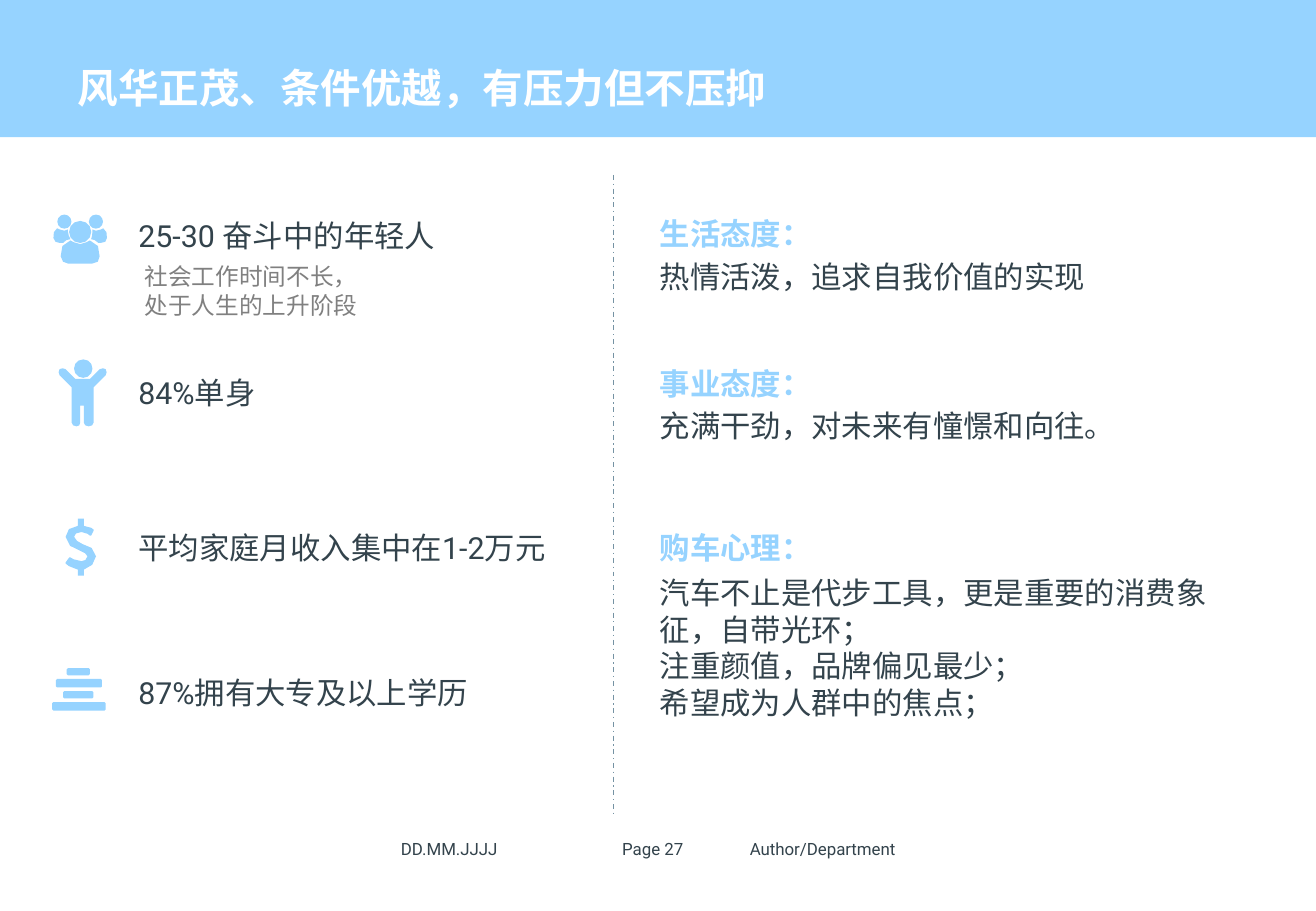
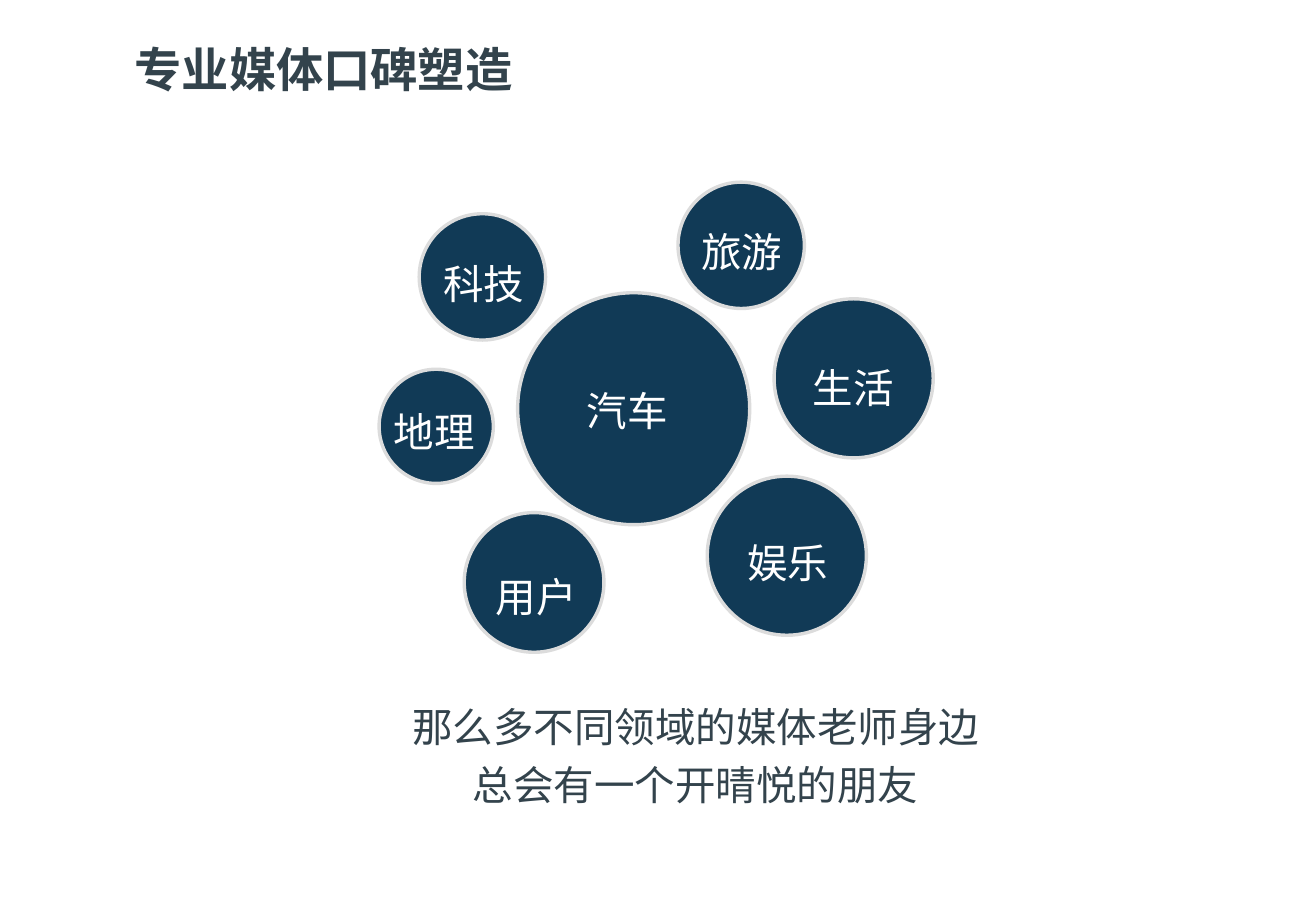
from dataclasses import dataclass
from math import cos, pi, sin

from lxml.etree import SubElement
from pptx import Presentation
from pptx.dml.color import RGBColor
from pptx.enum.dml import MSO_LINE as Dash
from pptx.enum.shapes import MSO_CONNECTOR as Link, MSO_SHAPE as Form
from pptx.enum.text import MSO_ANCHOR as Anchor, MSO_AUTO_SIZE as Fit, PP_ALIGN as Align
from pptx.oxml.ns import qn
from pptx.util import Pt

PX = 9144
SKY = RGBColor(0x96, 0xD3, 0xFF)
INK = RGBColor(0x33, 0x43, 0x4C)
GREY = RGBColor(0x80, 0x80, 0x80)
STEEL = RGBColor(0x75, 0x92, 0xA3)
NAVY = RGBColor(0x11, 0x3A, 0x56)
PALE = RGBColor(0xDC, 0xDC, 0xDC)
WHITE = RGBColor(0xFF, 0xFF, 0xFF)
LATIN = "Roboto"
HAN = "Noto Sans CJK SC"

Step = tuple[int, ...]
Loop = list[tuple[float, ...]]


@dataclass(frozen=True)
class Style:
    size: int
    color: RGBColor = INK
    bold: bool = False
    font: str = LATIN
    inset: bool = True
    wrap: bool = True
    grow: bool = True
    space: float | None = None
    align: Align = Align.LEFT
    anchor: Anchor = Anchor.TOP


@dataclass(frozen=True)
class Note:
    text: str
    box: tuple[int, int, int, int]
    style: Style


@dataclass(frozen=True)
class Topic:
    head: str
    body: str
    top: int
    below: int
    high: int


@dataclass(frozen=True)
class Disc:
    text: str
    left: int
    top: int
    size: int
    text_x: int
    text_y: int


FOOT = Style(10, inset=False, grow=False, anchor=Anchor.MIDDLE)
BODY = Style(18)
HEAD = Style(18, SKY, True)
SMALL = Style(14, GREY)
BAND = Style(24, WHITE, True, HAN)
TITLE = Style(28, INK, True, HAN, inset=False, grow=False, space=1.03)
LABEL = Style(24, WHITE, font=HAN, inset=False, wrap=False, space=1.2)
CLOSE = Style(24, font=HAN, inset=False, wrap=False, space=1.2, align=Align.CENTER)

NOTES = [
    Note("Author/Department", (617, 683, 148, 31), FOOT),
    Note("DD.MM.JJJJ", (330, 683, 176, 31), FOOT),
    Note("Page 27", (512, 683, 98, 31), FOOT),
    Note("风华正茂、条件优越，有压力但不压抑", (54, 47, 819, 52), BAND),
    Note("25-30 奋斗中的年轻人", (104, 174, 278, 74), BODY),
    Note("社会工作时间不长，\n处于人生的上升阶段", (109, 211, 223, 57), SMALL),
    Note("84%单身", (104, 303, 278, 44), BODY),
    Note("平均家庭月收入集中在1-2万元", (104, 431, 375, 44), BODY),
    Note("87%拥有大专及以上学历", (104, 550, 334, 44), BODY),
]

TOPICS = [
    Topic("生活态度：", "热情活泼，追求自我价值的实现", 172, 208, 40),
    Topic("事业态度：", "充满干劲，对未来有憧憬和向往。", 296, 330, 40),
    Topic(
        "购车心理：",
        "汽车不止是代步工具，更是重要的消费象征，自带光环；\n"
        "注重颜值，品牌偏见最少；\n希望成为人群中的焦点；",
        431, 468, 160,
    ),
]

DISCS = [
    Disc("汽车", 426, 241, 191, 483, 310),
    Disc("旅游", 558, 150, 104, 577, 179),
    Disc("生活", 637, 246, 131, 669, 291),
    Disc("娱乐", 582, 392, 131, 615, 435),
    Disc("地理", 312, 304, 94, 324, 327),
    Disc("科技", 345, 176, 104, 365, 205),
    Disc("用户", 382, 422, 115, 408, 463),
]


def ring(x: float, y: float, r: float) -> Loop:
    turns = [2 * pi * i / 12 for i in range(12)]
    return [(x + r * cos(a), y + r * sin(a)) for a in turns]


def bar(x: int, y: int, w: int, h: int) -> Loop:
    r, b = x + w, y + h
    return [
        (x + 1, y), (r - 1, y), (r, y + 1), (r, b - 1),
        (r - 1, b), (x + 1, b), (x, b - 1), (x, y + 1),
    ]


def trace(steps: list[Step]) -> Loop:
    loop: Loop = []
    for step in steps:
        if len(step) == 2:
            loop.append(step)
            continue
        (x, y), (a, b, c, d, e, f) = loop[-1], step
        loop.append(((x + 3 * a + 3 * c + e) / 8, (y + 3 * b + 3 * d + f) / 8))
        loop.append((e, f))
    return loop


GROUP = [
    trace([(52, 200), (49, 200), (47, 200, 44, 199, 44, 196),
           (44, 194, 44, 188, 47, 188), (48, 188, 50, 190, 53, 190),
           (56, 189), (56, 191), (56, 193, 57, 195, 58, 197),
           (56, 197, 53, 198, 52, 200)]),
    trace([(83, 200), (81, 200), (79, 198, 77, 197, 75, 197),
           (76, 195, 76, 193, 76, 191), (76, 189), (79, 190),
           (82, 190, 85, 188, 85, 188), (88, 188, 88, 194, 88, 196),
           (88, 199, 86, 200, 83, 200)]),
    trace([(76, 217), (56, 217), (53, 217, 50, 215, 50, 211),
           (50, 206, 51, 198, 58, 198), (59, 198, 62, 201, 66, 201),
           (70, 201, 73, 198, 74, 198), (81, 198, 82, 206, 82, 211),
           (82, 215, 80, 217, 76, 217)]),
    ring(53, 182.5, 5.8), ring(79, 182.5, 5.8), ring(66, 191, 9.1),
]
MAN = [
    trace([(77, 319), (77, 348), (77, 350, 75, 351, 73, 351),
           (71, 351, 69, 350, 69, 348), (69, 334), (66, 334), (66, 348),
           (66, 350, 65, 351, 63, 351), (61, 351, 59, 350, 59, 348),
           (59, 319), (49, 309), (48, 308, 48, 305, 49, 304),
           (50, 303, 53, 303, 54, 304), (62, 312), (74, 312), (82, 304),
           (84, 303, 86, 303, 87, 304), (88, 305, 88, 308, 87, 309)]),
    ring(68.5, 303.5, 7.6),
]
MONEY = [
    trace([(69, 469), (69, 474), (64, 474), (64, 469),
           (58, 468, 54, 464, 54, 464), (54, 463), (57, 459), (58, 459),
           (58, 459, 62, 462, 67, 462), (69, 462, 72, 461, 72, 458),
           (72, 456, 69, 455, 65, 453), (60, 451, 54, 449, 54, 442),
           (54, 437, 58, 433, 64, 433), (64, 427), (69, 427), (69, 433),
           (74, 433, 77, 436, 77, 436), (77, 437), (75, 441), (74, 441),
           (74, 441, 71, 438, 67, 438), (63, 438, 61, 440, 61, 442),
           (61, 445, 65, 446, 68, 448), (73, 449, 79, 452, 79, 458),
           (79, 463, 74, 468, 69, 469)]),
]
BARS = [bar(43, 578, 44, 7), bar(46, 559, 38, 7), bar(52, 569, 25, 6), bar(55, 550, 19, 6)]


def write(shape, text: str, style: Style) -> None:
    frame = shape.text_frame
    frame.text = text
    frame.word_wrap = style.wrap
    frame.auto_size = Fit.SHAPE_TO_FIT_TEXT if style.grow else Fit.NONE
    frame.vertical_anchor = style.anchor
    if not style.inset:
        frame.margin_left = frame.margin_right = 0
        frame.margin_top = frame.margin_bottom = 0
    for para in frame.paragraphs:
        para.alignment = style.align
        if style.space:
            para.line_spacing = style.space
        for run in para.runs:
            font = run.font
            font.size, font.bold, font.name = Pt(style.size), style.bold, style.font
            font.color.rgb = style.color
            SubElement(font._element, qn("a:ea")).set("typeface", HAN)


def place(slide, note: Note) -> None:
    write(slide.shapes.add_textbox(*(v * PX for v in note.box)), note.text, note.style)


def paint(shape, fill: RGBColor, edge: RGBColor | None = None) -> None:
    shape.shadow.inherit = False
    shape.fill.solid()
    shape.fill.fore_color.rgb = fill
    if edge is None:
        shape.line.fill.background()
    else:
        shape.line.color.rgb = edge
        shape.line.width = Pt(2)


def block(slide, form: Form, x: int, y: int, w: int, h: int,
          fill: RGBColor, edge: RGBColor | None = None):
    shape = slide.shapes.add_shape(form, x * PX, y * PX, w * PX, h * PX)
    paint(shape, fill, edge)
    return shape


def icon(slide, loops: list[Loop]) -> None:
    maker = None
    for loop in loops:
        first, *rest = [(x * PX, y * PX) for x, y in loop]
        if maker is None:
            maker = slide.shapes.build_freeform(*first, scale=1.0)
        else:
            maker.move_to(*first)
        maker.add_line_segments(rest, close=True)
    paint(maker.convert_to_shape(), SKY)


def split(slide, x: int, top: int, base: int) -> None:
    rule = slide.shapes.add_connector(Link.STRAIGHT, x * PX, top * PX, x * PX, base * PX)
    rule.line.color.rgb = STEEL
    rule.line.width = Pt(0.75)
    rule.line.dash_style = Dash.DASH_DOT
    SubElement(rule._element.spPr, qn("a:effectLst"))


def buyers(slide) -> None:
    block(slide, Form.RECTANGLE, -2, -3, 1087, 116, SKY)
    for note in NOTES:
        place(slide, note)
    for loops in (GROUP, MAN, MONEY, BARS):
        icon(slide, loops)
    split(slide, 505, 144, 672)
    for topic in TOPICS:
        place(slide, Note(topic.head, (533, topic.top, 175, 40), HEAD))
        place(slide, Note(topic.body, (533, topic.below, 478, topic.high), BODY))


def media(slide) -> None:
    text = "那么多不同领域的媒体老师身边\n总会有一个开晴悦的朋友"
    place(slide, Note(text, (337, 570, 471, 97), CLOSE))
    for disc in DISCS:
        block(slide, Form.OVAL, disc.left, disc.top, disc.size, disc.size, NAVY, PALE)
    for disc in DISCS:
        label = block(slide, Form.RECTANGLE, disc.text_x, disc.text_y, 67, 44, NAVY)
        write(label, disc.text, LABEL)
    place(slide, Note("专业媒体口碑塑造", (111, 32, 870, 48), TITLE))


def main() -> None:
    deck = Presentation()
    deck.slide_width, deck.slide_height = 1083 * PX, 750 * PX
    for draw in (buyers, media):
        draw(deck.slides.add_slide(deck.slide_layouts[6]))
    deck.save("out.pptx")


if __name__ == "__main__":
    main()
